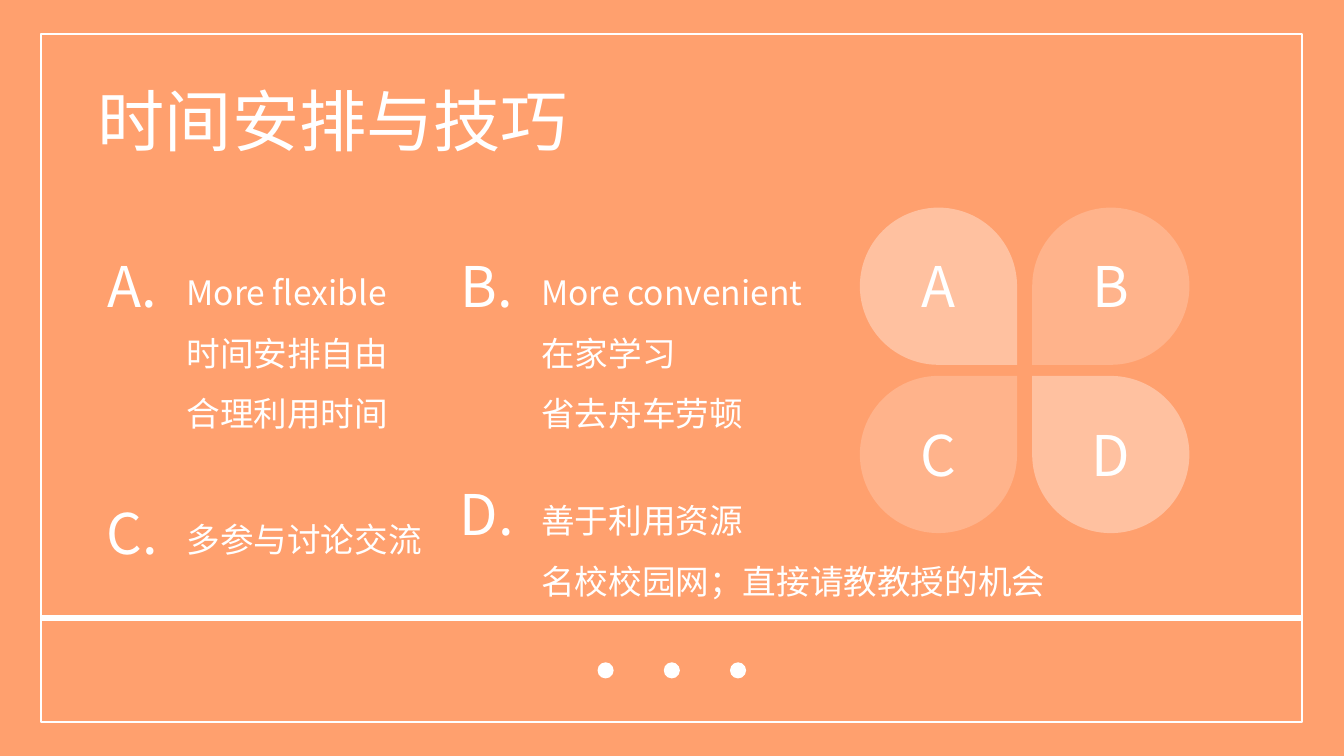
import pptx
import pptx.dml.color
import pptx.enum.shapes
import pptx.enum.text
import pptx.oxml.ns
import pptx.util
from lxml import etree

Pt = pptx.util.Pt
Shape = pptx.enum.shapes.MSO_SHAPE
Align = pptx.enum.text.PP_ALIGN
qn = pptx.oxml.ns.qn

FONT = "Noto Sans CJK SC"
COLORS = {"background": "FFA06E", "white": "FFFFFF"}
FORMATS = {
    "title": {"size": Pt(48), "bold": False},
    "letter": {"size": Pt(40), "bold": False},
    "body": {"size": Pt(24), "bold": False},
}
FRAME_FORMAT = {
    "word_wrap": True,
    "vertical_anchor": pptx.enum.text.MSO_ANCHOR.TOP,
    "auto_size": pptx.enum.text.MSO_AUTO_SIZE.SHAPE_TO_FIT_TEXT,
    "margin_left": Pt(7.2),
    "margin_right": Pt(7.2),
    "margin_top": Pt(3.6),
    "margin_bottom": Pt(3.6),
}
LETTER_WIDTH, LETTER_HEIGHT = 73.4, 55.4
POINTS = [
    ("A.", 57.6, 176.4, 165, 133.2, ["More flexible", "时间安排自由", "合理利用时间"]),
    ("B.", 311, 176.4, 215.3, 133.2, ["More convenient", "在家学习", "省去舟车劳顿"]),
    ("C.", 57.6, 352.8, 200.2, 46.1, ["多参与讨论交流"]),
    ("D.", 311, 339.1, 377.3, 89.3, ["善于利用资源", "名校校园网；直接请教教授的机会"]),
]
PETALS = [("A", 90, 35), ("B", 180, 20), ("C", 0, 20), ("D", 270, 35)]


def color(name):
    """Return the named colour."""
    return pptx.dml.color.RGBColor.from_string(COLORS[name])


def set_all(target, values):
    """Set each attribute from a dict of format values."""
    for name, value in values.items():
        setattr(target, name, value)


def place(shape, left, top, width, height):
    """Move and size a shape, in points."""
    box = {"left": left, "top": top, "width": width, "height": height}
    set_all(shape, {name: Pt(value) for name, value in box.items()})


def write(shape, lines, style, alignment=Align.LEFT, spacing=1.0):
    """Fill a shape with unbulleted white paragraphs."""
    frame = shape.text_frame
    set_all(frame, FRAME_FORMAT)
    for index, line in enumerate(lines):
        paragraph = frame.paragraphs[0] if index == 0 else frame.add_paragraph()
        properties = paragraph._p.get_or_add_pPr()
        properties.set("marL", "0")
        properties.set("indent", "0")
        etree.SubElement(properties, qn("a:buNone"))
        set_all(paragraph, {"alignment": alignment, "line_spacing": spacing,
                            "space_before": Pt(0), "space_after": Pt(0)})
        run = paragraph.add_run()
        run.text = line
        run.font.color.rgb = color("white")
        set_all(run.font, {"name": FONT, **FORMATS[style]})
        latin = run.font._element.find(qn("a:latin"))
        latin.addnext(latin.makeelement(qn("a:ea"), {"typeface": FONT}))


def add_letter(slide, text, left, top):
    """Add a large centred letter."""
    letter = slide.shapes.add_textbox(
        Pt(left), Pt(top), Pt(LETTER_WIDTH), Pt(LETTER_HEIGHT))
    write(letter, [text], "letter", Align.CENTER)


def add_white_shape(slide, kind, left, top, width, height):
    """Add a white shape without outline or shadow."""
    shape = slide.shapes.add_shape(kind, Pt(left), Pt(top), Pt(width), Pt(height))
    shape.shadow.inherit = False
    shape.fill.solid()
    shape.fill.fore_color.rgb = color("white")
    shape.line.fill.background()
    return shape


def draw_frame(slide, left, top, width, height):
    """Draw the border, the footer rule and three centred dots."""
    border = add_white_shape(slide, Shape.RECTANGLE, left, top, width, height)
    border.fill.background()
    border.line.color.rgb = color("white")
    border.line.width = Pt(1.5)
    rule_top = top + 416.9
    rule = slide.shapes.add_connector(
        pptx.enum.shapes.MSO_CONNECTOR.STRAIGHT,
        Pt(left), Pt(rule_top), Pt(left + width), Pt(rule_top))
    rule.line.color.rgb = color("white")
    rule.line.width = Pt(4.5)
    etree.SubElement(rule._element.spPr, qn("a:effectLst"))
    dot, step = 11.5, 47.3
    for offset in (-1, 0, 1):
        dot_left = left + (width - dot) / 2 + offset * step
        add_white_shape(slide, Shape.OVAL, dot_left, top + 448.6, dot, dot)


def draw_petals(slide, left, top, size, step_x, step_y):
    """Draw the two by two flower of lettered translucent petals."""
    for index, (letter, rotation, opacity) in enumerate(PETALS):
        row, column = divmod(index, 2)
        x, y = left + column * step_x, top + row * step_y
        petal = add_white_shape(slide, Shape.TEAR, x, y, size, size)
        petal.rotation = rotation
        fill_color = petal._element.spPr.find(qn("a:solidFill"))[0]
        etree.SubElement(fill_color, qn("a:alpha"), val=str(opacity * 1000))
        add_letter(slide, letter, x + (size - LETTER_WIDTH) / 2, y + 28.1)


def draw_point(slide, body, letter, left, top, width, height, lines):
    """Place a lettered point with its list to the right."""
    add_letter(slide, letter, left, top)
    place(body, left + 68.4, top, width, height)
    write(body, lines, "body", spacing=1.5)


def build_slide(presentation):
    """Build the slide on time planning and skills."""
    slide = presentation.slides.add_slide(presentation.slide_layouts[4])
    slide.background.fill.solid()
    slide.background.fill.fore_color.rgb = color("background")
    draw_frame(slide, 29.5, 24.5, 900.8, 491)
    title, *bodies = slide.placeholders
    place(title, 62.6, 53.3, 386, 65.5)
    write(title, ["时间安排与技巧"], "title")
    draw_petals(slide, 614.2, 148.3, 112.3, 123.1, 120.2)
    for body, point in zip(bodies, POINTS):
        draw_point(slide, body, *point)


def main():
    """Create and save the presentation."""
    presentation = pptx.Presentation()
    set_all(presentation, {"slide_width": Pt(960), "slide_height": Pt(540)})
    build_slide(presentation)
    presentation.save("out.pptx")


if __name__ == "__main__":
    main()
